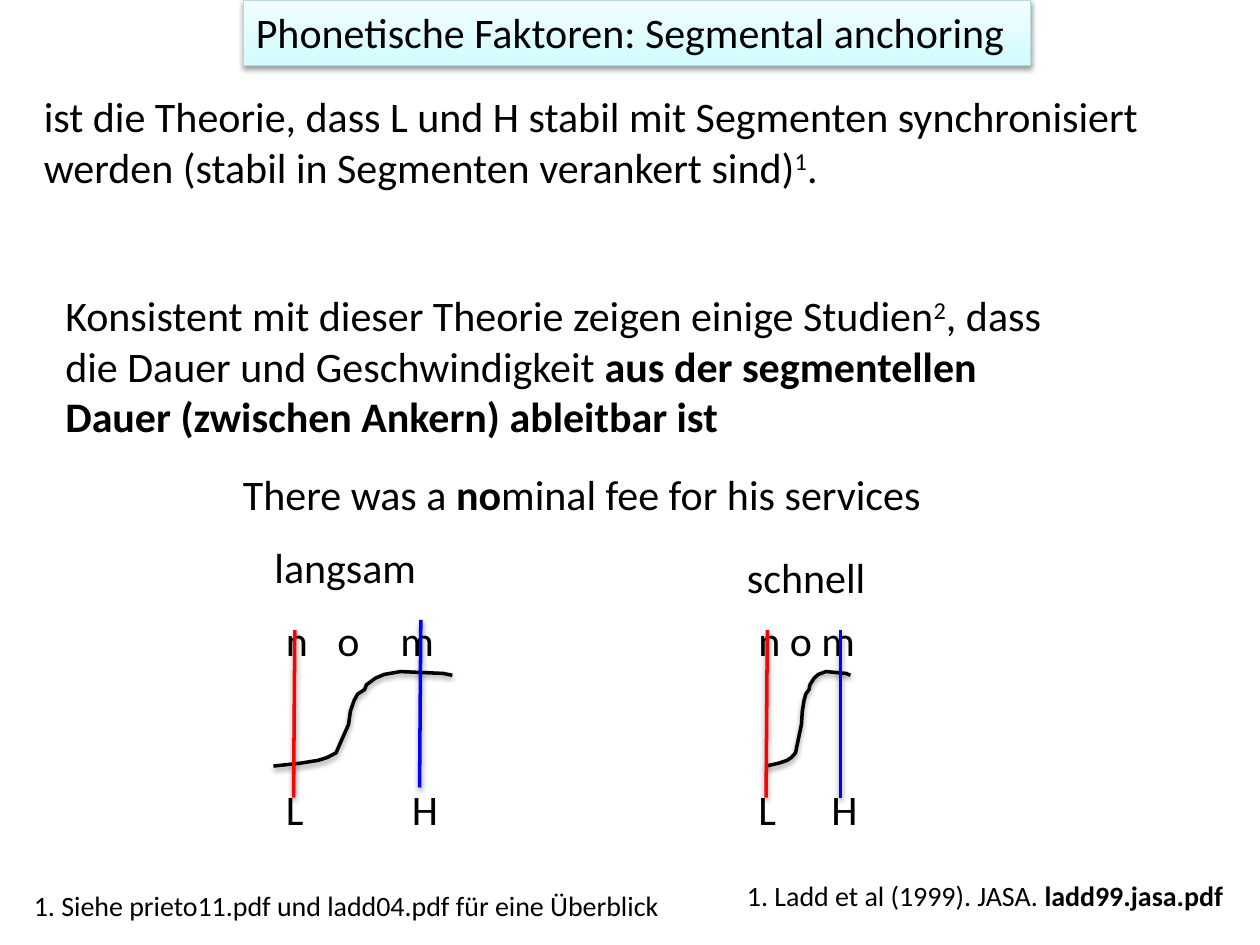
from lxml.etree import SubElement
from pptx import Presentation
from pptx.dml.color import RGBColor
from pptx.enum.shapes import MSO_CONNECTOR
from pptx.enum.text import MSO_ANCHOR, MSO_AUTO_SIZE, PP_ALIGN
from pptx.oxml.ns import qn
from pptx.util import Inches, Pt

BLACK = RGBColor(0, 0, 0)
RED = RGBColor(0xFF, 0, 0)
BLUE = RGBColor(0, 0, 0xFF)
CYAN = RGBColor(0xD3, 0xFB, 0xFF)
PALE_CYAN = RGBColor(0xF2, 0xFE, 0xFF)
TITLE_EDGE = RGBColor(0xB6, 0xDC, 0xDF)

TITLE = "Phonetische Faktoren: Segmental anchoring"
PLAIN, BOLD, RAISED = "plain", "bold", "raised"
TEXTS = [
    ((0.25, 0.67, 9, 0.91), 24, [
        ("ist die Theorie, dass L und H stabil mit Segmenten synchronisiert "
         "werden (stabil in Segmenten verankert sind)", PLAIN),
        ("1", RAISED), (".", PLAIN)]),
    ((0.42, 2.25, 8.17, 1.31), 24, [
        ("Konsistent mit dieser Theorie zeigen einige Studien", PLAIN),
        ("2", RAISED), (", dass die Dauer und Geschwindigkeit ", PLAIN),
        ("aus der segmentellen Dauer (zwischen Ankern) ableitbar ist", BOLD)]),
    ((1.83, 3.67, 5.75, 0.51), 24, [
        ("There was a ", PLAIN), ("no", BOLD),
        ("minal fee for his services", PLAIN)]),
    ((0.17, 7, 5.75, 0.37), 16, [
        ("1. Siehe prieto11.pdf und ladd04.pdf für eine Überblick", PLAIN)]),
    ((5.83, 6.92, 4.17, 0.37), 16, [
        ("1. Ladd et al (1999). JASA. ", PLAIN), ("ladd99.jasa.pdf", BOLD)]),
]

TEMPOS = [
    {"label": ("langsam", 2.08, 4.25),
     "sounds": [("n", 2.17), ("o", 2.58), ("m", 3.08)],
     "tones": [("L", 2.17), ("H", 3.17)],
     "anchors": [(2.34, 2.33, 5, RED), (3.34, 3.33, 4.92, BLUE)],
     "curve": (2.17, 1.42)},
    {"label": ("schnell", 5.83, 4.33),
     "sounds": [("n", 5.92), ("o", 6.17), ("m", 6.42)],
     "tones": [("L", 5.92), ("H", 6.5)],
     "anchors": [(6.09, 6.08, 5, RED), (6.67, 6.67, 5, BLUE)],
     "curve": (6.08, 0.67)},
]
SOUND_TOP, TONE_TOP, CURVE_TOP = 4.83, 6.17, 5.33
ANCHOR_HEIGHT, CURVE_HEIGHT = 1.33, 0.75
PITCH = [(0, 1), (0.15, 0.97), (0.25, 0.94), (0.3, 0.91), (0.35, 0.86),
         (0.38, 0.73), (0.42, 0.56), (0.43, 0.42), (0.45, 0.31),
         (0.47, 0.24), (0.51, 0.19), (0.52, 0.14), (0.57, 0.07),
         (0.62, 0.03), (0.71, 0), (0.83, 0.01), (0.95, 0.02), (1, 0.04)]


def cast_shadow(shape):
    effects = SubElement(shape._element.spPr, qn("a:effectLst"))
    shadow = SubElement(effects, qn("a:outerShdw"), blurRad="40000",
                        dist="20000", dir="5400000", rotWithShape="0")
    color = SubElement(shadow, qn("a:srgbClr"), val="000000")
    SubElement(color, qn("a:alpha"), val="38000")


def set_line(shape, color, width):
    shape.line.color.rgb = color
    shape.line.width = Pt(width)
    cast_shadow(shape)


def set_font(para, size):
    para.font.name = "Calibri"
    para.font.size = Pt(size)
    para.font.color.rgb = BLACK


def add_text(page, place, size, spans):
    box = page.shapes.add_textbox(*map(Inches, place))
    frame = box.text_frame
    frame.word_wrap = True
    frame.auto_size = MSO_AUTO_SIZE.SHAPE_TO_FIT_TEXT
    para = frame.paragraphs[0]
    set_font(para, size)
    for text, style in spans:
        span = para.add_run()
        span.text = text
        if style == BOLD:
            span.font.bold = True
        elif style == RAISED:
            span.font._element.set("baseline", "30000")


def add_title(page):
    title = page.shapes.title
    title.left, title.top, title.width, title.height = map(
        Inches, (1.93, 0, 6.25, 0.52))
    title.fill.gradient()
    title.fill.gradient_angle = 90
    for stop, color in zip(title.fill.gradient_stops, (CYAN, PALE_CYAN)):
        stop.color.rgb = color
    set_line(title, TITLE_EDGE, 0.75)
    frame = title.text_frame
    frame.text = TITLE
    frame.auto_size = MSO_AUTO_SIZE.NONE
    frame.vertical_anchor = MSO_ANCHOR.TOP
    frame.paragraphs[0].alignment = PP_ALIGN.LEFT
    set_font(frame.paragraphs[0], 24)


def add_curve(page, left, width):
    points = [(Inches(left + x * width), Inches(CURVE_TOP + y * CURVE_HEIGHT))
              for x, y in PITCH]
    builder = page.shapes.build_freeform(*points[0])
    builder.add_line_segments(points[1:], close=False)
    curve = builder.convert_to_shape()
    curve.fill.background()
    set_line(curve, BLACK, 2)


def add_tempo(page, tempo):
    label, left, top = tempo["label"]
    add_text(page, (left, top, 1.5, 0.5), 24, [(label, PLAIN)])
    add_curve(page, *tempo["curve"])
    for letters, top in (("sounds", SOUND_TOP), ("tones", TONE_TOP)):
        for letter, left in tempo[letters]:
            width = 0.5 if letter in "nm" else 0.42
            add_text(page, (left, top, width, 0.51), 24, [(letter, PLAIN)])
    for start, end, top, color in tempo["anchors"]:
        anchor = page.shapes.add_connector(
            MSO_CONNECTOR.STRAIGHT,
            *map(Inches, (start, top, end, top + ANCHOR_HEIGHT)))
        set_line(anchor, color, 2)


def main():
    deck = Presentation()
    deck.slide_width, deck.slide_height = Inches(10), Inches(7.5)
    page = deck.slides.add_slide(deck.slide_layouts[5])
    add_title(page)
    for place, size, spans in TEXTS:
        add_text(page, place, size, spans)
    for tempo in TEMPOS:
        add_tempo(page, tempo)
    deck.save("out.pptx")


if __name__ == "__main__":
    main()
